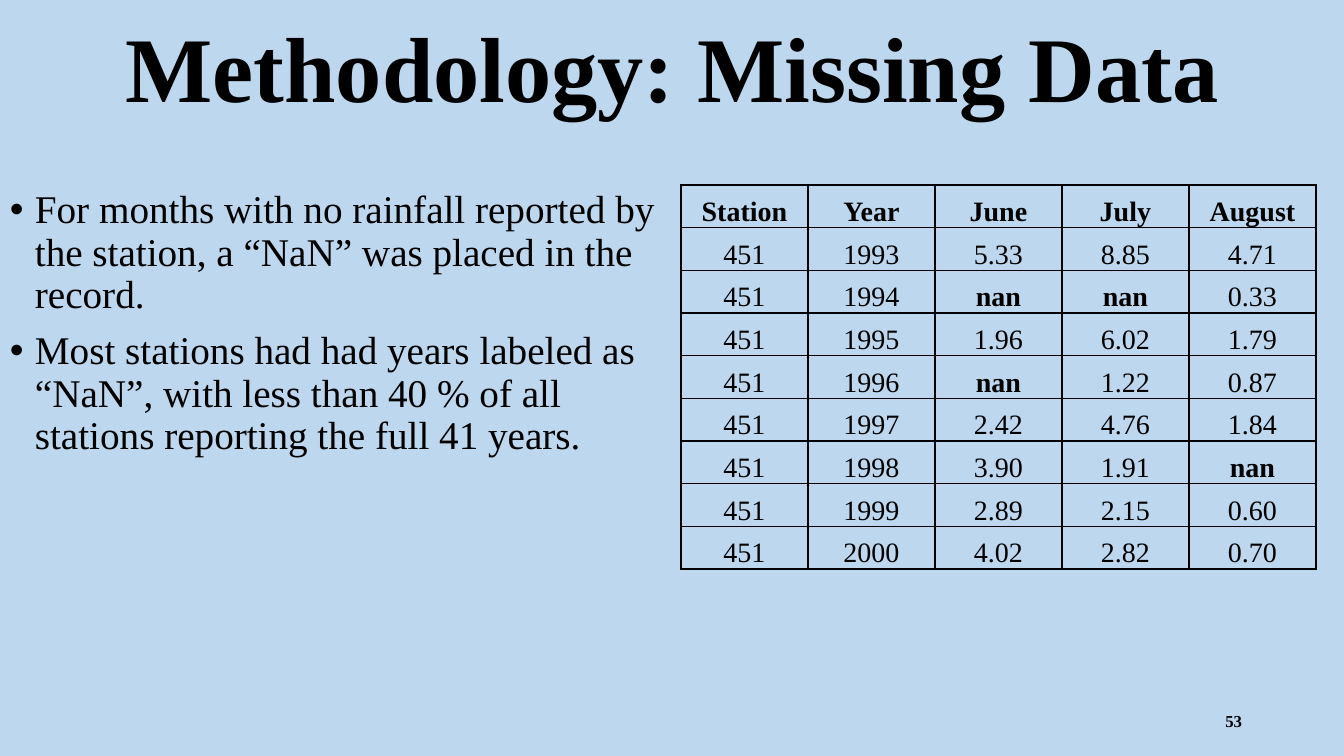
from dataclasses import dataclass

from lxml import etree
from pptx import Presentation
from pptx.dml.color import RGBColor
from pptx.enum.text import MSO_ANCHOR, PP_ALIGN
from pptx.oxml.ns import qn
from pptx.util import Emu, Pt

LEFT, CENTER, RIGHT = PP_ALIGN.LEFT, PP_ALIGN.CENTER, PP_ALIGN.RIGHT
TOP, MIDDLE, BOTTOM = MSO_ANCHOR.TOP, MSO_ANCHOR.MIDDLE, MSO_ANCHOR.BOTTOM
BLANK_LAYOUT = 6
EMU_PER_PX = 914400 / 100.8

PAGE_SIZE = (1344, 756)
TITLE = "Methodology: Missing Data"
POINTS = [
    "For months with no rainfall reported by the station, a “NaN” was placed in the record.",
    "Most stations had had years labeled as “NaN”, with less than 40 % of all stations "
    "reporting the full 41 years.",
]
STATION = "451"
HEADINGS = ["Station", "Year", "June", "July", "August"]
RAINFALL = {
    "1993": ["5.33", "8.85", "4.71"],
    "1994": ["nan", "nan", "0.33"],
    "1995": ["1.96", "6.02", "1.79"],
    "1996": ["nan", "1.22", "0.87"],
    "1997": ["2.42", "4.76", "1.84"],
    "1998": ["3.90", "1.91", "nan"],
    "1999": ["2.89", "2.15", "0.60"],
    "2000": ["4.02", "2.82", "0.70"],
}


@dataclass(frozen=True)
class Theme:
    font: str = "Times New Roman"
    background: str = "BDD7EE"
    ink: str = "000000"
    title_size: int = 66
    body_size: int = 28
    table_size: int = 20
    number_size: int = 12
    border_width: int = 1
    line_spacing: float = 0.9
    point_gap: int = 10
    bullet_indent: int = 25


def px(length):
    return Emu(round(length * EMU_PER_PX))


class PageBuilder:
    def __init__(self, page, theme):
        self.page = page
        self.theme = theme
        fill = page.background.fill
        fill.solid()
        fill.fore_color.rgb = RGBColor.from_string(theme.background)

    def add_span(self, para, text, size, bold=False, align=LEFT):
        para.alignment = align
        span = para.add_run()
        span.text = text
        span.font.name = self.theme.font
        span.font.size = Pt(size)
        span.font.bold = bold
        span.font.color.rgb = RGBColor.from_string(self.theme.ink)

    def text_frame(self, bounds, anchor):
        frame = self.page.shapes.add_textbox(*map(px, bounds)).text_frame
        frame.word_wrap = True
        frame.vertical_anchor = anchor
        return frame

    def label(self, bounds, text, size, align, spacing=1.0):
        para = self.text_frame(bounds, MIDDLE).paragraphs[0]
        para.line_spacing = spacing
        self.add_span(para, text, size, True, align)

    def bullets(self, bounds, points):
        frame = self.text_frame(bounds, TOP)
        indent = px(self.theme.bullet_indent)
        for index, point in enumerate(points):
            para = frame.add_paragraph() if index else frame.paragraphs[0]
            para.line_spacing = self.theme.line_spacing
            if index:
                para.space_before = Pt(self.theme.point_gap)
            properties = para._p.get_or_add_pPr()
            properties.set("marL", str(indent))
            properties.set("indent", str(-indent))
            etree.SubElement(properties, qn("a:buFont"), typeface="Arial")
            etree.SubElement(properties, qn("a:buChar"), char="•")
            self.add_span(para, point, self.theme.body_size)

    def table(self, bounds, rows):
        """Draw equal rows and columns; headings and missing values are bold."""
        shape = self.page.shapes.add_table(len(rows), len(rows[0]), *map(px, bounds))
        grid = shape.table
        grid.first_row = grid.horz_banding = False
        for row, values in enumerate(rows):
            for column, value in enumerate(values):
                cell = grid.cell(row, column)
                cell.vertical_anchor = BOTTOM
                cell.margin_left = cell.margin_right = cell.margin_top = px(1)
                cell.margin_bottom = 0
                self.outline(cell)
                cell.fill.background()
                self.add_span(cell.text_frame.paragraphs[0], value, self.theme.table_size,
                              row == 0 or value == "nan", CENTER)

    def outline(self, cell):
        properties = cell._tc.get_or_add_tcPr()
        for side in ("a:lnL", "a:lnR", "a:lnT", "a:lnB"):
            line = etree.SubElement(properties, qn(side), w=str(Pt(self.theme.border_width)))
            fill = etree.SubElement(line, qn("a:solidFill"))
            etree.SubElement(fill, qn("a:srgbClr"), val=self.theme.ink)


def main():
    deck = Presentation()
    deck.slide_width, deck.slide_height = map(px, PAGE_SIZE)
    theme = Theme()
    builder = PageBuilder(deck.slides.add_slide(deck.slide_layouts[BLANK_LAYOUT]), theme)

    builder.bullets((0, 185, 680, 595), POINTS)
    records = [[STATION, year, *months] for year, months in RAINFALL.items()]
    builder.table((681, 185, 635, 384), [HEADINGS, *records])
    builder.label((950, 701, 302, 40), "53", theme.number_size, RIGHT)
    builder.label((93, 0, 1159, 146), TITLE, theme.title_size, CENTER, theme.line_spacing)

    deck.save("out.pptx")


if __name__ == "__main__":
    main()
